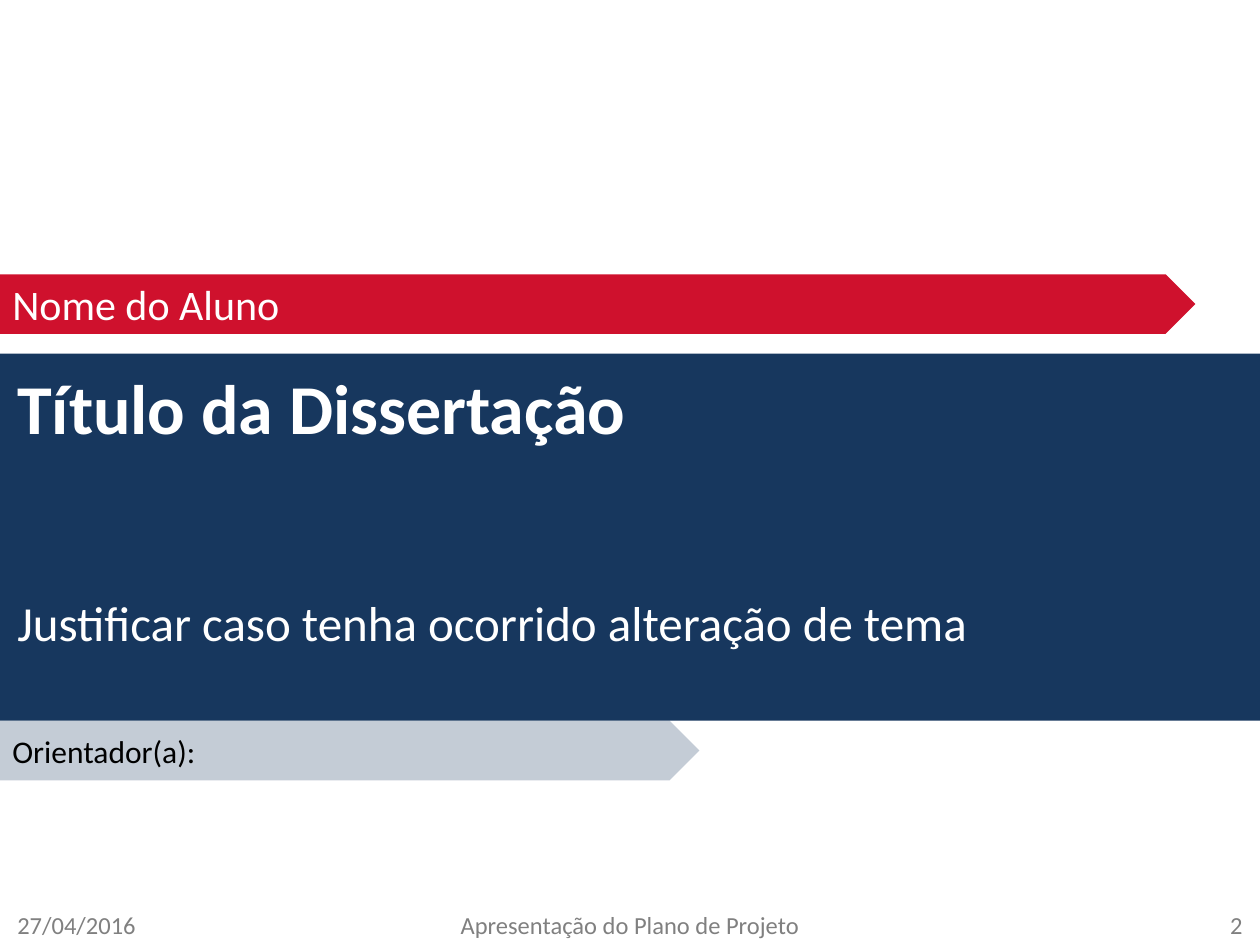
from lxml.etree import SubElement
from pptx import Presentation
from pptx.dml.color import RGBColor
from pptx.enum.shapes import MSO_SHAPE
from pptx.enum.text import MSO_ANCHOR, PP_ALIGN
from pptx.oxml.ns import qn
from pptx.util import Cm, Pt

NAVY, RED, WHITE, BLACK, GREY = "17375E", "CF112D", "FFFFFF", "000000", "808080"
PAGE_WIDTH, PAGE_HEIGHT = 25.4, 19.05


def colour(value):
    """Turn a hex string into a colour."""
    return RGBColor.from_string(value)


def write(para, text, ink, align=PP_ALIGN.LEFT, **formats):
    """Write one span of formatted text into a paragraph."""
    para.alignment = align
    span = para.add_run()
    span.text = text
    span.font.color.rgb = colour(ink)
    for name, value in {"name": "Calibri", "bold": False, **formats}.items():
        setattr(span.font, name, value)


def add_text_box(page, box, anchor=MSO_ANCHOR.TOP):
    """Add a wrapping text box and return its frame."""
    frame = page.shapes.add_textbox(*map(Cm, box)).text_frame
    frame.word_wrap = True
    frame.vertical_anchor = anchor
    return frame


def add_panel(page, kind, box, fill, opacity=100):
    """Add a borderless filled shape with the given opacity in percent."""
    panel = page.shapes.add_shape(kind, *map(Cm, box))
    panel.shadow.inherit = False
    panel.fill.solid()
    panel.fill.fore_color.rgb = colour(fill)
    panel.line.fill.background()
    if opacity < 100:
        tint = panel.fill._xPr.find(".//" + qn("a:srgbClr"))
        SubElement(tint, qn("a:alpha"), val=str(opacity * 1000))
    return panel


def add_banner(page, box, text, fill, ink, size, opacity=100):
    """Add an arrow-ended banner with one line of text."""
    frame = add_panel(page, MSO_SHAPE.PENTAGON, box, fill, opacity).text_frame
    frame.word_wrap = True
    frame.vertical_anchor = MSO_ANCHOR.MIDDLE
    write(frame.paragraphs[0], text, ink, size=Pt(size))


def add_title_band(page, box, title, note):
    """Add the full-width band with the title and the note below it."""
    left, top, width, height = box
    add_panel(page, MSO_SHAPE.RECTANGLE, box, NAVY)
    frame = add_text_box(page, (left + 0.1, top + 0.1, width - 0.8, height - 1.3))
    write(frame.paragraphs[0], title, WHITE, size=Pt(40), bold=True)
    para = frame.add_paragraph()
    para.space_before = Pt(82)
    write(para, note, WHITE, size=Pt(28))


def add_footer(page, box, date, subject, number):
    """Add the date, the subject and the page number across a strip."""
    left, top, width, height = box
    side, middle = 5.93, 8.04
    parts = [
        (left, side, date, PP_ALIGN.LEFT),
        (left + (width - middle) / 2, middle, subject, PP_ALIGN.CENTER),
        (left + width - side, side, number, PP_ALIGN.RIGHT),
    ]
    for start, span_width, text, align in parts:
        frame = add_text_box(page, (start, top, span_width, height), MSO_ANCHOR.MIDDLE)
        write(frame.paragraphs[0], text, GREY, align, size=Pt(14))


def main():
    """Build the deck and save it."""
    deck = Presentation()
    deck.slide_width, deck.slide_height = Cm(PAGE_WIDTH), Cm(PAGE_HEIGHT)
    page = deck.slides.add_slide(deck.slide_layouts[6])
    add_footer(page, (0.1, 18.14, PAGE_WIDTH - 0.2, 1.01),
               "27/04/2016", "Apresentação do Plano de Projeto", "2")
    add_title_band(page, (0, 7.13, PAGE_WIDTH, 7.4), "Título da Dissertação",
                   "Justificar caso tenha ocorrido alteração de tema")
    add_banner(page, (0, 14.53, 14.1, 1.2), "Orientador(a):", NAVY, BLACK, 18, 25)
    add_banner(page, (0, 5.53, 24.1, 1.2), "Nome do Aluno", RED, WHITE, 24)
    deck.save("out.pptx")


if __name__ == "__main__":
    main()
